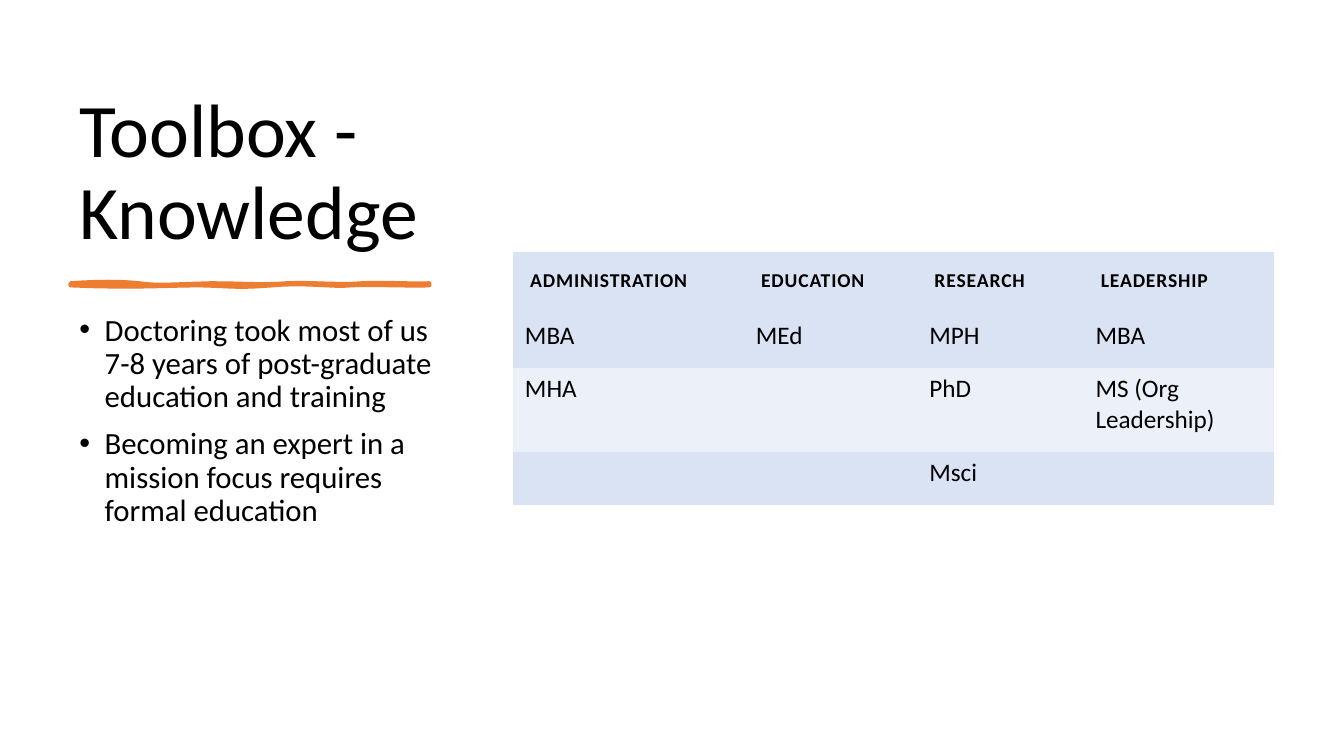
import dataclasses

import lxml.etree
import pptx
import pptx.dml.color
import pptx.enum.text
import pptx.oxml
import pptx.oxml.ns
import pptx.util

Cm = pptx.util.Cm
Pt = pptx.util.Pt


@dataclasses.dataclass(frozen=True)
class Theme:
    font: str = "Calibri"
    text: str = "000000"
    accent: str = "ED7D31"
    band: str = "DAE3F3"
    light_band: str = "ECF1F9"
    title_size: int = 54
    body_size: int = 22
    header_size: int = 14
    cell_size: int = 18


THEME = Theme()
NO_GRID_STYLE = "{2D5ABB26-0587-4C30-8999-92F81FD0307C}"

BULLETS = [
    "Doctoring took most of us 7-8 years of post-graduate education and training",
    "Becoming an expert in a mission focus requires formal education",
]
DEGREES = [
    ["ADMINISTRATION", "EDUCATION", "RESEARCH", "LEADERSHIP"],
    ["MBA", "MEd", "MPH", "MBA"],
    ["MHA", "", "PhD", "MS (Org Leadership)"],
    ["", "", "Msci", ""],
]
COLUMN_WIDTHS = [5.82, 4.37, 4.19, 4.8]
ROW_HEIGHTS = [1.57, 1.35, 2.11, 1.35]

# Brush stroke edges in cm: a start, then three Bezier points per curve
STROKE_TOP = [
    (1.78, 7.14),
    (2.46, 7.09), (3.07, 7.09), (3.51, 7.14),
    (3.94, 7.21), (4.5, 7.16), (5.31, 7.14),
    (6.12, 7.14), (6.6, 7.19), (7.21, 7.14),
    (7.82, 7.11), (8.61, 7.19), (9.12, 7.14),
    (9.63, 7.11), (10.46, 7.16), (10.82, 7.14),
]
STROKE_BOTTOM = [
    (10.82, 7.19),
    (10.36, 7.21), (9.25, 7.16), (8.84, 7.19),
    (8.43, 7.24), (7.72, 7.11), (6.86, 7.19),
    (5.97, 7.26), (5.87, 7.21), (5.05, 7.19),
    (4.22, 7.19), (3.35, 7.26), (1.78, 7.19),
]


def set_attributes(target, values):
    for name, value in values.items():
        setattr(target, name, value)


def rgb(color):
    return pptx.dml.color.RGBColor.from_string(color)


def add_run(paragraph, text, size, bold=False):
    run = paragraph.add_run()
    run.text = text
    set_attributes(run.font, {"name": THEME.font, "size": Pt(size), "bold": bold})
    run.font.color.rgb = rgb(THEME.text)
    return run


def add_bullet(paragraph):
    properties = paragraph._p.get_or_add_pPr()
    set_attributes(paragraph, {"space_before": Pt(10)})
    properties.set("marL", str(Cm(0.64)))
    properties.set("indent", str(Cm(-0.64)))
    for tag, name, value in (("a:buFont", "typeface", "Arial"),
                             ("a:buChar", "char", "•")):
        element = lxml.etree.SubElement(properties, pptx.oxml.ns.qn(tag))
        element.set(name, value)


def add_text(slide, box, texts, size, anchor, bulleted=False):
    shape = slide.shapes.add_textbox(*(Cm(length) for length in box))
    frame = shape.text_frame
    set_attributes(frame, {"word_wrap": True, "vertical_anchor": anchor})
    for index, text in enumerate(texts):
        paragraph = frame.add_paragraph() if index else frame.paragraphs[0]
        paragraph.line_spacing = 0.9
        if bulleted:
            add_bullet(paragraph)
        add_run(paragraph, text, size)


def curve_points(points, steps=8):
    """Sample a chain of cubic Bezier curves."""
    sampled = [points[0]]
    for first in range(0, len(points) - 1, 3):
        controls = points[first:first + 4]
        for step in range(1, steps + 1):
            t = step / steps
            weights = ((1 - t) ** 3, 3 * t * (1 - t) ** 2, 3 * t * t * (1 - t), t ** 3)
            sampled.append(tuple(
                sum(weight * point[axis] for weight, point in zip(weights, controls))
                for axis in (0, 1)))
    return sampled


def add_brush_stroke(slide):
    outline = [(Cm(x), Cm(y))
               for x, y in curve_points(STROKE_TOP) + curve_points(STROKE_BOTTOM)]
    builder = slide.shapes.build_freeform(*outline[0])
    builder.add_line_segments(outline[1:], close=True)
    shape = builder.convert_to_shape()
    shape.shadow.inherit = False
    for fill in (shape.fill, shape.line.fill):
        fill.solid()
        fill.fore_color.rgb = rgb(THEME.accent)
    shape.line.width = Pt(3)
    line = shape.line._get_or_add_ln()
    lxml.etree.SubElement(line, pptx.oxml.ns.qn("a:round"))


def fill_cell(cell, text, row):
    header = row == 0
    side, top, bottom = (0.43, 0.43, 0.43) if header else (0.3, 0.15, 0.3)
    set_attributes(cell, {
        "margin_left": Cm(side), "margin_right": Cm(side),
        "margin_top": Cm(top), "margin_bottom": Cm(bottom),
    })
    cell.fill.solid()
    cell.fill.fore_color.rgb = rgb(THEME.light_band if row == 2 else THEME.band)
    if text:
        size = THEME.header_size if header else THEME.cell_size
        run = add_run(cell.text_frame.paragraphs[0], text, size, bold=header)
        if header:
            run.font._element.set("spc", "60")


def add_degree_table(slide):
    graphic_frame = slide.shapes.add_table(
        len(ROW_HEIGHTS), len(COLUMN_WIDTHS), Cm(12.93), Cm(6.35),
        Cm(sum(COLUMN_WIDTHS)), Cm(sum(ROW_HEIGHTS)))
    table = graphic_frame.table
    set_attributes(table, {"first_row": False, "horz_banding": False})
    for style in graphic_frame._element.iter(pptx.oxml.ns.qn("a:tableStyleId")):
        style.text = NO_GRID_STYLE
    for column, width in zip(table.columns, COLUMN_WIDTHS):
        column.width = Cm(width)
    for row, height in zip(table.rows, ROW_HEIGHTS):
        row.height = Cm(height)
    for row, texts in enumerate(DEGREES):
        for column, text in enumerate(texts):
            fill_cell(table.cell(row, column), text, row)


def main():
    presentation = pptx.Presentation()
    set_attributes(presentation, {"slide_width": Cm(33.87), "slide_height": Cm(19.05)})
    slide = presentation.slides.add_slide(presentation.slide_layouts[6])
    anchors = pptx.enum.text.MSO_ANCHOR

    # Left column: title, stroke and bullets
    add_text(slide, (1.75, 1.78, 9.53, 4.78), ["Toolbox - Knowledge"],
             THEME.title_size, anchors.BOTTOM)
    add_brush_stroke(slide)
    add_text(slide, (1.75, 7.8, 9.53, 9.47), BULLETS,
             THEME.body_size, anchors.TOP, bulleted=True)

    # Right column: degrees by mission focus
    add_degree_table(slide)

    presentation.save("out.pptx")


if __name__ == "__main__":
    main()
